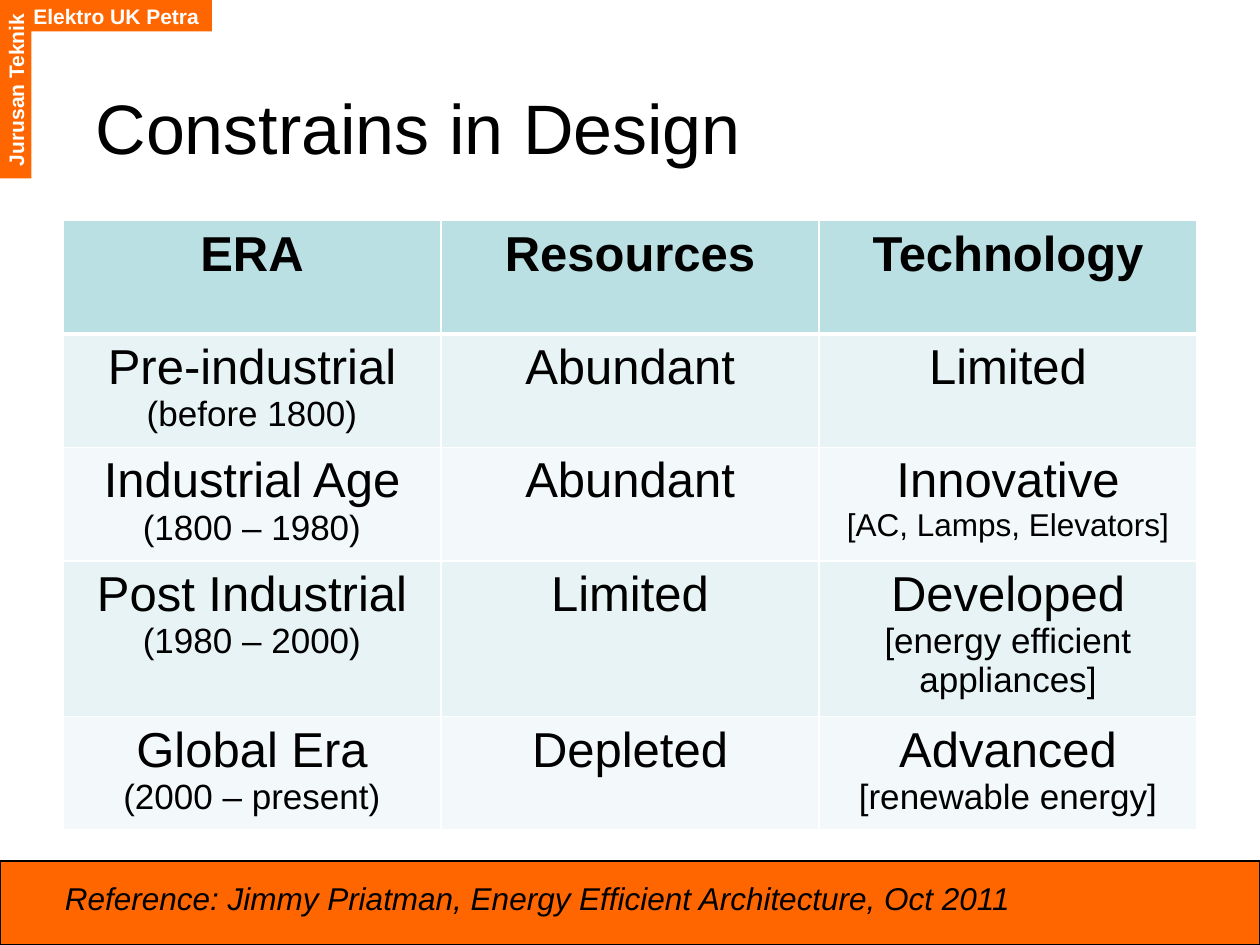
import dataclasses

import lxml.etree
import pptx
import pptx.dml.color
import pptx.enum.shapes
import pptx.enum.text
import pptx.oxml.ns
import pptx.util

ALIGN = pptx.enum.text.PP_ALIGN
ANCHOR = pptx.enum.text.MSO_ANCHOR
RECTANGLE = pptx.enum.shapes.MSO_SHAPE.RECTANGLE
SLIDE_WIDTH, SLIDE_HEIGHT = 10, 7.5
COLUMNS, ROWS = 120, 90


@dataclasses.dataclass(frozen=True)
class Theme:
    font: str = "Arial"
    orange: str = "FF6600"
    black: str = "000000"
    white: str = "FFFFFF"
    header: str = "BBE0E3"
    bands: tuple = ("E7F3F4", "F3F9FA")
    title_size: int = 40
    cell_size: int = 28
    detail_size: int = 20
    small_size: int = 18
    tab_size: int = 12
    thin: int = 1
    thick: int = 3


THEME = Theme()


@dataclasses.dataclass(frozen=True)
class Box:
    left: float
    top: float
    width: float
    height: float

    def inner(self, left, top, width, height):
        return Box(self.left + left, self.top + top, width, height)

    def turned(self):
        shift = (self.width - self.height) / 2
        return Box(self.left + shift, self.top - shift, self.height, self.width)

    def lengths(self):
        across, down = SLIDE_WIDTH / COLUMNS, SLIDE_HEIGHT / ROWS
        return [pptx.util.Inches(value * unit) for value, unit in
                zip((self.left, self.top, self.width, self.height),
                    (across, down, across, down))]


def rgb(value):
    return pptx.dml.color.RGBColor.from_string(value)


def add_span(para, text, size, color=THEME.black, bold=False, italic=False,
             align=ALIGN.LEFT):
    para.alignment = align
    span = para.add_run()
    span.text = text
    span.font.name = THEME.font
    span.font.size = pptx.util.Pt(size)
    span.font.color.rgb = rgb(color)
    span.font.bold = bold
    span.font.italic = italic


def add_text(page, box, text, anchor=ANCHOR.TOP, **style):
    frame = page.shapes.add_textbox(*box.lengths()).text_frame
    frame.word_wrap = True
    frame.vertical_anchor = anchor
    add_span(frame.paragraphs[0], text, **style)
    return frame


def add_bar(page, box, outlined=False):
    bar = page.shapes.add_shape(RECTANGLE, *box.lengths())
    bar.shadow.inherit = False
    bar.fill.solid()
    bar.fill.fore_color.rgb = rgb(THEME.orange)
    if outlined:
        bar.line.color.rgb = rgb(THEME.black)
        bar.line.width = pptx.util.Pt(0.75)
    else:
        bar.line.fill.background()
    return bar


def add_department_tabs(page, box):
    across = box.inner(2, 0, box.width - 2, 3)
    upright = box.inner(0, 0, 3, box.height).turned()
    for place, text, rotation in ((across, "Elektro UK Petra", 0),
                                  (upright, "Jurusan Teknik", 270)):
        tab = add_bar(page, place)
        tab.rotation = rotation
        tab.text_frame.word_wrap = False
        tab.text_frame.vertical_anchor = ANCHOR.MIDDLE
        add_span(tab.text_frame.paragraphs[0], text, THEME.tab_size,
                 color=THEME.white, bold=True)


def add_title(page, box, text):
    add_text(page, box, text, anchor=ANCHOR.MIDDLE, size=THEME.title_size)


def add_border(cell, side, width):
    properties = cell._tc.get_or_add_tcPr()
    name = pptx.oxml.ns.qn
    line = lxml.etree.SubElement(properties, name(f"a:{side}"),
                                 w=str(pptx.util.Pt(width)))
    fill = lxml.etree.SubElement(line, name("a:solidFill"))
    lxml.etree.SubElement(fill, name("a:srgbClr"), val=THEME.white)


def fill_cell(cell, lines, row):
    thick_sides = {0: "lnB", 1: "lnT"}
    for side in ("lnL", "lnR", "lnT", "lnB"):
        thick = thick_sides.get(row) == side
        add_border(cell, side, THEME.thick if thick else THEME.thin)
    cell.fill.solid()
    cell.fill.fore_color.rgb = rgb(THEME.bands[(row - 1) % 2] if row else THEME.header)
    for index, spans in enumerate(lines):
        frame = cell.text_frame
        para = frame.add_paragraph() if index else frame.paragraphs[0]
        for text, size in spans:
            add_span(para, text, size, bold=row == 0, align=ALIGN.CENTER)


def entry(main, detail=None, size=THEME.detail_size):
    lines = [[(main, THEME.cell_size)]]
    if detail:
        lines.append([(detail, size)])
    return lines


def add_era_table(page, box, rows):
    table = page.shapes.add_table(len(rows), len(rows[0]), *box.lengths()).table
    for row, entries in enumerate(rows):
        for column, lines in enumerate(entries):
            fill_cell(table.cell(row, column), lines, row)


def add_reference(page, box, text):
    add_text(page, box.inner(5, 1.16, 110, 4.8), text,
             size=THEME.small_size, italic=True)


def main():
    deck = pptx.Presentation()
    deck.slide_width = pptx.util.Inches(SLIDE_WIDTH)
    deck.slide_height = pptx.util.Inches(SLIDE_HEIGHT)
    page = deck.slides.add_slide(deck.slide_layouts[6])
    footer = Box(0, 82, COLUMNS, 8)
    pre_industrial = [[("Pre-industrial ", THEME.cell_size),
                       ("(before 1800)", THEME.detail_size)]]
    eras = [
        [entry("ERA"), entry("Resources"), entry("Technology")],
        [pre_industrial, entry("Abundant"), entry("Limited")],
        [entry("Industrial Age", "(1800 – 1980)"), entry("Abundant"),
         entry("Innovative", "[AC, Lamps, Elevators]", THEME.small_size)],
        [entry("Post Industrial", "(1980 – 2000)"), entry("Limited"),
         entry("Developed", "[energy efficient appliances]")],
        [entry("Global Era", "(2000 – present)"), entry("Depleted"),
         entry("Advanced", "[renewable energy]")],
    ]
    add_bar(page, footer, outlined=True)
    add_department_tabs(page, Box(0, 0, 20.2, 17))
    add_title(page, Box(7.92, 6.24, 91.8, 11.64), "Constrains in Design")
    add_era_table(page, Box(6, 21, 108, 54), eras)
    add_reference(page, footer,
                  "Reference: Jimmy Priatman, Energy Efficient Architecture, Oct 2011")
    deck.save("out.pptx")


if __name__ == "__main__":
    main()
